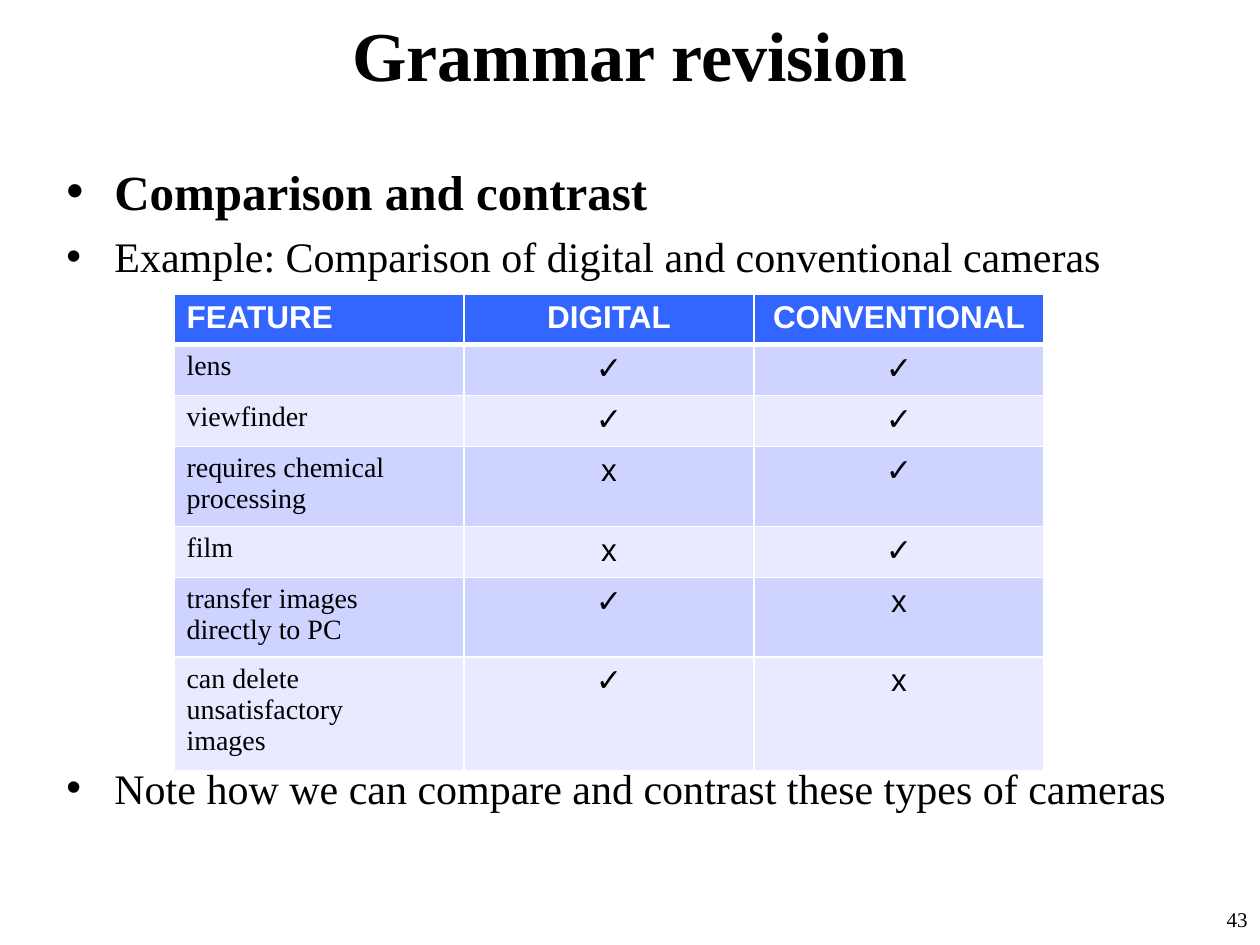
from lxml import etree
from pptx import Presentation
from pptx.dml.color import RGBColor
from pptx.enum.text import MSO_ANCHOR as Anchor, PP_ALIGN as Align
from pptx.oxml.ns import qn
from pptx.util import Emu, Pt

EMU_PER_PX = 914400 / 126
SERIF = "Times New Roman"
SANS = "Arial"
BLACK = "000000"
WHITE = "FFFFFF"
HEADER_BLUE = "3366FF"
BANDS = ("CED3FF", "E8EAFF")
ROW_HEIGHTS = (48, 51, 51, 75, 51, 75, 105)
COLUMN_WIDTH = 290
FEATURES = (
    ("FEATURE", "DIGITAL", "CONVENTIONAL"),
    ("lens", "✓", "✓"),
    ("viewfinder", "✓", "✓"),
    ("requires chemical\nprocessing", "x", "✓"),
    ("film", "x", "✓"),
    ("transfer images\ndirectly to PC", "✓", "x"),
    ("can delete\nunsatisfactory\nimages", "✓", "x"),
)


def px(length):
    return Emu(round(length * EMU_PER_PX))


def color(value):
    return RGBColor.from_string(value)


def write(para, text, size=24, font=SERIF, ink=BLACK, bold=False, align=Align.LEFT, before=0):
    para.alignment = align
    para.space_before = Pt(before)
    span = para.add_run()
    span.text = text
    span.font.size = Pt(size)
    span.font.name = font
    span.font.bold = bold
    span.font.color.rgb = color(ink)


def add_box(page, left, top, width, height, anchor=Anchor.TOP):
    box = page.shapes.add_textbox(px(left), px(top), px(width), px(height))
    frame = box.text_frame
    frame.word_wrap = True
    frame.vertical_anchor = anchor
    return frame


def add_bullet(para):
    props = para._p.get_or_add_pPr()
    props.set("marL", str(px(48)))
    props.set("indent", str(-px(48)))
    etree.SubElement(props, qn("a:buFont")).set("typeface", SANS)
    etree.SubElement(props, qn("a:buChar")).set("char", "•")


def add_bullets(page, items):
    frame = add_box(page, 54, 155, 1160, 685)
    for index, (text, style) in enumerate(items):
        para = frame.add_paragraph() if index else frame.paragraphs[0]
        write(para, text, **style)
        add_bullet(para)


def set_borders(cell, bottom):
    props = cell._tc.get_or_add_tcPr()
    widths = {"a:lnL": 1, "a:lnR": 1, "a:lnT": 1, "a:lnB": bottom}
    for position, (tag, points) in enumerate(widths.items()):
        line = etree.Element(qn(tag), w=str(Pt(points)))
        fill = etree.SubElement(line, qn("a:solidFill"))
        etree.SubElement(fill, qn("a:srgbClr")).set("val", WHITE)
        props.insert(position, line)


def fill_cell(cell, text, fill, bottom, **style):
    cell.fill.solid()
    cell.fill.fore_color.rgb = color(fill)
    set_borders(cell, bottom)
    frame = cell.text_frame
    for index, line in enumerate(text.split("\n")):
        para = frame.add_paragraph() if index else frame.paragraphs[0]
        write(para, line, **style)


def add_feature_table(page):
    columns = len(FEATURES[0])
    table = page.shapes.add_table(
        len(FEATURES), columns, px(174), px(294),
        px(COLUMN_WIDTH * columns), px(sum(ROW_HEIGHTS))).table
    for column in table.columns:
        column.width = px(COLUMN_WIDTH)
    for r, (height, texts) in enumerate(zip(ROW_HEIGHTS, FEATURES)):
        table.rows[r].height = px(height)
        for c, text in enumerate(texts):
            align = Align.CENTER if c else Align.LEFT
            if r == 0:
                fill_cell(table.cell(r, c), text, HEADER_BLUE, 3, size=18,
                          font=SANS, ink=WHITE, bold=True, align=align)
            else:
                size, font = (18, SANS) if c else (16, SERIF)
                bottom = 1
                fill_cell(table.cell(r, c), text, BANDS[(r - 1) % 2], bottom,
                          size=size, font=font, align=align)


def main():
    deck = Presentation()
    deck.slide_width, deck.slide_height = px(1260), px(945)
    page = deck.slides.add_slide(deck.slide_layouts[6])

    title = add_box(page, 0, 0, 1260, 106, Anchor.MIDDLE)
    write(title.paragraphs[0], "Grammar revision", size=40, bold=True, align=Align.CENTER)
    add_bullets(page, (
        ("Comparison and contrast", {"size": 28, "bold": True, "before": 3}),
        ("Example: Comparison of digital and conventional cameras", {"before": 6}),
        ("Note how we can compare and contrast these types of cameras", {"before": 275}),
    ))
    number = add_box(page, 998, 900, 262, 45)
    write(number.paragraphs[0], "43", size=12, align=Align.RIGHT)
    add_feature_table(page)

    deck.save("out.pptx")


if __name__ == "__main__":
    main()
